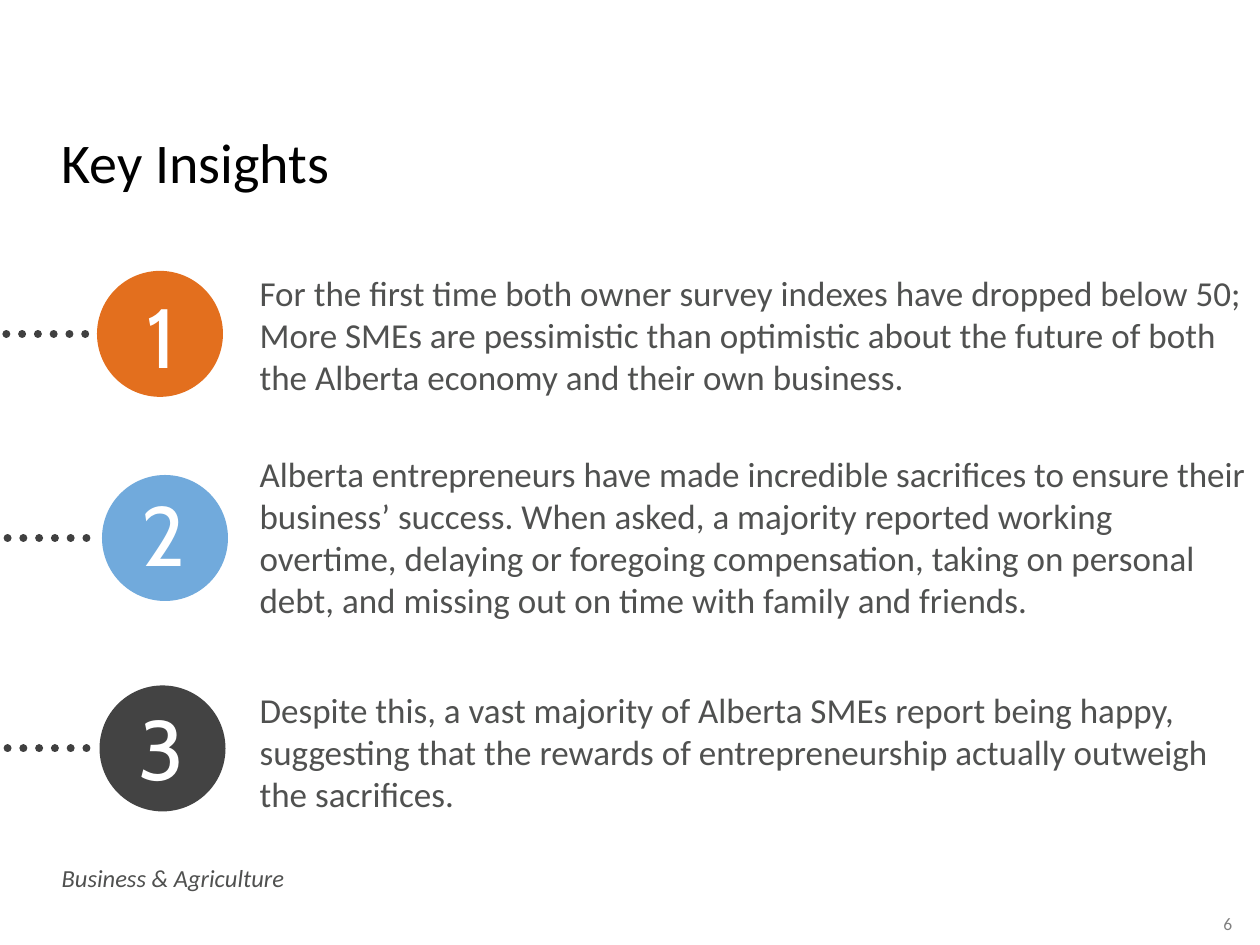
from lxml.etree import SubElement
from pptx import Presentation
from pptx.dml.color import RGBColor
from pptx.enum.dml import MSO_LINE
from pptx.enum.shapes import MSO_CONNECTOR, MSO_SHAPE
from pptx.enum.text import MSO_ANCHOR, PP_ALIGN
from pptx.oxml.ns import qn
from pptx.util import Inches, Pt

BLACK = RGBColor(0x00, 0x00, 0x00)
WHITE = RGBColor(0xFF, 0xFF, 0xFF)
TEXT_GRAY = RGBColor(0x50, 0x51, 0x50)
PAGE_GRAY = RGBColor(0x80, 0x80, 0x80)
DOT_GRAY = RGBColor(0x40, 0x40, 0x40)
ORANGE = RGBColor(0xE3, 0x6F, 0x1E)
BLUE = RGBColor(0x71, 0xAA, 0xDC)
CHARCOAL = RGBColor(0x43, 0x43, 0x43)

TITLE = "Key Insights"
FOOTER = "Business & Agriculture"
PAGE_NUMBER = "6"

# Insight, disc colour, disc left, disc centre, dots left, number left and top, text top
INSIGHTS = [
    ("For the first time both owner survey indexes have dropped below 50; "
     "More SMEs are pessimistic than optimistic about the future of both "
     "the Alberta economy and their own business.",
     ORANGE, 0.77, 2.65, 0.05, 0.74, 2.21, 2.32),
    ("Alberta entrepreneurs have made incredible sacrifices to ensure their "
     "business’ success. When asked, a majority reported working overtime, "
     "delaying or foregoing compensation, taking on personal debt, and "
     "missing out on time with family and friends.",
     BLUE, 0.81, 4.27, 0.06, 0.76, 3.78, 3.92),
    ("Despite this, a vast majority of Alberta SMEs report being happy, "
     "suggesting that the rewards of entrepreneurship actually outweigh "
     "the sacrifices.",
     CHARCOAL, 0.79, 5.94, 0.06, 0.74, 5.48, 5.63),
]
DISC_SIZE = 1
DOTS_LENGTH = 0.75


def add_text(slide, text, left, top, width, height, size, color, font="Calibri",
             italic=False, align=PP_ALIGN.LEFT, anchor=MSO_ANCHOR.TOP,
             insets=(0.1, 0.05, 0.1, 0.05)):
    box = slide.shapes.add_textbox(Inches(left), Inches(top), Inches(width), Inches(height))
    frame = box.text_frame
    frame.word_wrap = True
    frame.vertical_anchor = anchor
    (frame.margin_left, frame.margin_top,
     frame.margin_right, frame.margin_bottom) = map(Inches, insets)
    paragraph = frame.paragraphs[0]
    paragraph.alignment = align
    run = paragraph.add_run()
    run.text = text
    run.font.name = font
    run.font.size = Pt(size)
    run.font.italic = italic
    run.font.color.rgb = color


def add_dots(slide, left, y):
    dots = slide.shapes.add_connector(
        MSO_CONNECTOR.STRAIGHT, Inches(left), Inches(y), Inches(left + DOTS_LENGTH), Inches(y))
    dots.line.color.rgb = DOT_GRAY
    dots.line.width = Pt(4.5)
    dots.line.dash_style = MSO_LINE.ROUND_DOT
    properties = dots._element.spPr
    properties.find(qn("a:ln")).set("cap", "rnd")
    SubElement(properties, qn("a:effectLst"))


def add_disc(slide, left, center, color):
    disc = slide.shapes.add_shape(
        MSO_SHAPE.OVAL, Inches(left), Inches(center - DISC_SIZE / 2),
        Inches(DISC_SIZE), Inches(DISC_SIZE))
    disc.shadow.inherit = False
    disc.fill.solid()
    disc.fill.fore_color.rgb = color
    disc.line.fill.background()


def main():
    deck = Presentation()
    deck.slide_width, deck.slide_height = Inches(10), Inches(7.5)
    slide = deck.slides.add_slide(deck.slide_layouts[6])

    # Title, footer and page number
    add_text(slide, TITLE, 0.39, 0.96, 9.22, 0.79, size=32, color=BLACK)
    add_text(slide, FOOTER, 0.39, 6.8, 2.81, 0.34, size=14, color=TEXT_GRAY, italic=True)
    add_text(slide, PAGE_NUMBER, 9.5, 7.2, 0.49, 0.27, size=10, color=PAGE_GRAY,
             align=PP_ALIGN.CENTER)

    # Numbered insights
    for number, insight in enumerate(INSIGHTS, 1):
        text, color, disc_left, center, dots_left, number_left, number_top, text_top = insight
        add_text(slide, text, 2.02, text_top, 7.98, 0.63, size=20, color=TEXT_GRAY,
                 anchor=MSO_ANCHOR.MIDDLE, insets=(0.04, 0.04, 0.04, 0))
        add_dots(slide, dots_left, center)
        add_disc(slide, disc_left, center, color)
        add_text(slide, str(number), number_left, number_top, 1.08, 0.91, size=48,
                 color=WHITE, font="Cabin", align=PP_ALIGN.CENTER)

    deck.save("out.pptx")


if __name__ == "__main__":
    main()
